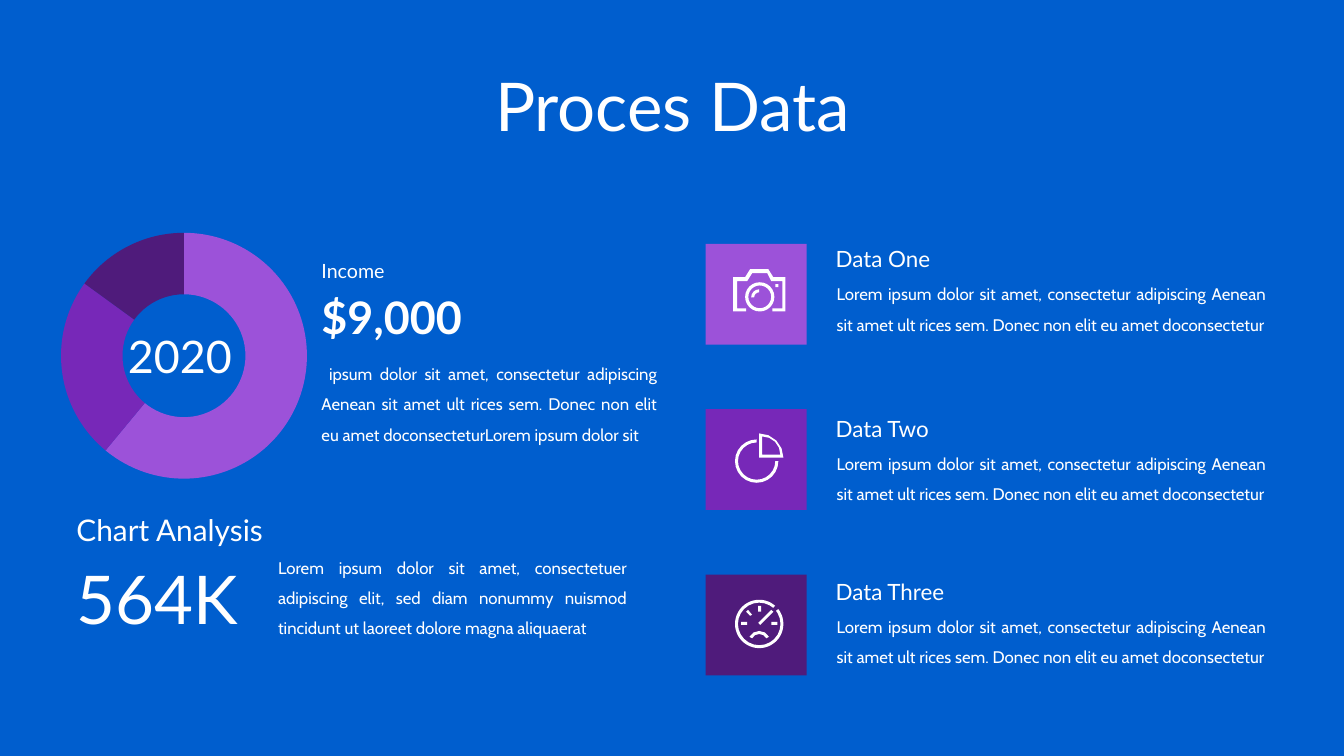
"""Build the Proces Data slide: a doughnut, key figures and three icon tiles."""
from math import cos, radians, sin

from pptx import Presentation
from pptx.chart.data import CategoryChartData
from pptx.dml.color import RGBColor
from pptx.enum.chart import XL_CHART_TYPE
from pptx.enum.shapes import MSO_SHAPE
from pptx.enum.text import MSO_ANCHOR, MSO_AUTO_SIZE, PP_ALIGN
from pptx.oxml import parse_xml
from pptx.oxml.ns import nsdecls, qn
from pptx.util import Inches, Pt

COLORS = {"ground": "005ECE", "white": "FFFFFF", "text": "262626",
          "light": "9C52D9", "middle": "7728B8", "dark": "4F1B7B"}
SHADES = ("light", "middle", "dark")
HEAD_FONT, BODY_FONT = "Lato", "Cabin"
WIDTH, HEIGHT = 13.33, 7.5

TITLE = "Proces Data"
SHARES = {"1": 61, "2": 24, "3": 15}
LOREM = ("Lorem ipsum dolor sit amet, consectetur adipiscing Aenean sit amet "
         "ult rices sem. Donec non elit eu amet doconsectetur")

LEFT, INCOME, TILES, DETAILS = 0.66, 3.09, 7, 8.19
TILE_TOP, TILE_PITCH, TILE = 2.42, 1.64, 1

LABELS = [
    ("Income", (INCOME, 2.52, 0.93, 0.34), 14, False),
    ("$9,000", (INCOME, 2.83, 1.78, 0.64), 32, True),
    ("2020", (1.17, 3.21, 1.31, 0.64), 32, False),
    ("Chart Analysis", (LEFT, 5.03, 2.44, 0.46), 21.33, False),
    ("564K", (LEFT, 5.48, 1.93, 0.91), 48, False),
]
PARAGRAPHS = [
    (" ipsum dolor sit amet, consectetur adipiscing Aenean sit amet ult rices "
     "sem. Donec non elit eu amet doconsecteturLorem ipsum dolor sit",
     (INCOME, 3.46, 3.53, 0.98)),
    ("Lorem ipsum dolor sit amet, consectetuer adipiscing elit, sed diam nonummy "
     "nuismod tincidunt ut laoreet dolore magna aliquaerat",
     (2.66, 5.38, 3.66, 0.98)),
]
ITEMS = [("Data One", 2.38, 2.67, 1.28), ("Data Two", 4.07, 4.35, 1.28),
         ("Data Three", 5.69, 5.97, 1.46)]


def arc(x, y, radius, start, end):
    """Return points along an arc, with angles running clockwise from the right."""
    steps = 4
    angles = [radians(start + (end - start) * i / steps) for i in range(steps + 1)]
    return [(x + radius * cos(a), y + radius * sin(a)) for a in angles]


def band(x, y, outer, inner, start, end):
    """Return the outline of a short curved band."""
    return arc(x, y, outer, start, end) + arc(x, y, inner, end, start)


def wedge(x, y, radius):
    """Return the outline of an upper right quarter disc."""
    return [(x, y)] + arc(x, y, radius, -90, 0)


CAMERA_BODY = [
    (0.79, 0.67), (0.66, 0.67), (0.66, 0.64), (0.76, 0.64), (0.76, 0.37),
    (0.65, 0.37), (0.61, 0.29), (0.46, 0.29), (0.41, 0.37), (0.31, 0.37),
    (0.31, 0.64), (0.4, 0.64), (0.4, 0.67), (0.27, 0.67), (0.27, 0.33),
    (0.39, 0.33), (0.44, 0.25), (0.62, 0.25), (0.67, 0.33), (0.79, 0.33)]
GAUGE_TICK = [(0.44, 0.41), (0.4, 0.37), (0.42, 0.35), (0.46, 0.4)]
GAUGE_NEEDLE = [(0.54, 0.5), (0.52, 0.48), (0.65, 0.35), (0.67, 0.37)]

ICONS = [
    {"outlines": [[CAMERA_BODY], [band(0.53, 0.53, 0.08, 0.05, 180, 270)]],
     "presets": [(MSO_SHAPE.DONUT, (0.39, 0.38, 0.29, 0.29), (0.11,)),
                 (MSO_SHAPE.RECTANGLE, (0.69, 0.4, 0.03, 0.03), ())]},
    {"outlines": [[wedge(0.53, 0.48, 0.24), wedge(0.56, 0.45, 0.18)]],
     "presets": [(MSO_SHAPE.BLOCK_ARC, (0.29, 0.3, 0.43, 0.43), (0, 270 * 0.6, 0.07))]},
    {"outlines": [[GAUGE_TICK], [GAUGE_NEEDLE],
                  [band(0.53, 0.67, 0.11, 0.08, 208, 332)]],
     "presets": [(MSO_SHAPE.RECTANGLE, (0.52, 0.31, 0.03, 0.06), ()),
                 (MSO_SHAPE.RECTANGLE, (0.65, 0.47, 0.06, 0.03), ()),
                 (MSO_SHAPE.RECTANGLE, (0.35, 0.47, 0.06, 0.03), ()),
                 (MSO_SHAPE.BLOCK_ARC, (0.29, 0.25, 0.48, 0.48),
                  (322 * 0.6, 311 * 0.6, 0.06))]},
]


def paint(shape, color):
    shape.shadow.inherit = False
    shape.fill.solid()
    shape.fill.fore_color.rgb = RGBColor.from_string(COLORS[color])
    shape.line.fill.background()


def add_preset(shapes, kind, place, color, adjustments=()):
    shape = shapes.add_shape(kind, *map(Inches, place))
    for i, value in enumerate(adjustments):
        shape.adjustments[i] = value
    paint(shape, color)


def add_outline(shapes, contours, left, top, color):
    points = [[(Inches(left + x), Inches(top + y)) for x, y in contour]
              for contour in contours]
    builder = shapes.build_freeform(*points[0][0])
    builder.add_line_segments(points[0][1:])
    for contour in points[1:]:
        builder.move_to(*contour[0])
        builder.add_line_segments(contour[1:])
    paint(builder.convert_to_shape(), color)


def add_icon(page, icon, left, top):
    shapes = page.shapes.add_group_shape().shapes
    for contours in icon["outlines"]:
        add_outline(shapes, contours, left, top, "white")
    for kind, (x, y, width, height), adjustments in icon["presets"]:
        add_preset(shapes, kind, (left + x, top + y, width, height), "white", adjustments)


def style_text(frame, text, size, font, bold=False):
    frame.text = text
    para = frame.paragraphs[0]
    span = para.runs[0].font
    span.size, span.name, span.bold = Pt(size), font, bold
    span.color.rgb = RGBColor.from_string(COLORS["white"])
    return para


def add_text(page, text, place, size, font, bold=False, wrap=False):
    frame = page.shapes.add_textbox(*map(Inches, place)).text_frame
    frame.word_wrap = wrap
    frame.auto_size = MSO_AUTO_SIZE.SHAPE_TO_FIT_TEXT
    return style_text(frame, text, size, font, bold)


def add_body(page, text, place):
    para = add_text(page, text, place, 12, BODY_FONT, wrap=True)
    para.alignment = PP_ALIGN.JUSTIFY
    para.line_spacing = 1.5


def place_title(page):
    title = page.shapes.title
    title.left, title.top, title.width, title.height = map(Inches, (0.92, 0.09, 11.5, 2))
    frame = title.text_frame
    frame.vertical_anchor = MSO_ANCHOR.MIDDLE
    frame.auto_size = MSO_AUTO_SIZE.NONE
    para = style_text(frame, TITLE, 48, HEAD_FONT)
    para.alignment = PP_ALIGN.CENTER
    para.line_spacing = 0.9
    page.shapes._spTree.append(title._element)


def add_doughnut(page):
    data = CategoryChartData()
    data.categories = list(SHARES)
    data.add_series("Series 1", list(SHARES.values()))
    place = map(Inches, (0.22, 2.17, 3.21, 2.72))
    chart = page.shapes.add_chart(XL_CHART_TYPE.DOUGHNUT, *place, data).chart
    chart.has_legend = chart.has_title = False
    chart.font.size, chart.font.name = Pt(10), BODY_FONT
    chart.font.color.rgb = RGBColor.from_string(COLORS["text"])
    plot = chart.plots[0]
    plot.vary_by_categories = True
    plot._element.find(qn("c:holeSize")).set("val", "70")
    for i, shade in enumerate(SHADES):
        look = plot.series[0].points[i].format
        look.fill.solid()
        look.fill.fore_color.rgb = RGBColor.from_string(COLORS[shade])
        look.line.fill.background()
    area = chart._chartSpace.chart.plotArea
    for layout in area.findall(qn("c:layout")):
        area.remove(layout)
    area.insert(0, parse_xml(
        f'<c:layout {nsdecls("c")}><c:manualLayout><c:layoutTarget val="inner"/>'
        '<c:xMode val="edge"/><c:yMode val="edge"/><c:x val="0.12"/><c:y val="0.05"/>'
        '<c:w val="0.76"/><c:h val="0.9"/></c:manualLayout></c:layout>'))


def main():
    deck = Presentation()
    deck.slide_width, deck.slide_height = Inches(WIDTH), Inches(HEIGHT)
    page = deck.slides.add_slide(deck.slide_layouts[5])
    add_preset(page.shapes, MSO_SHAPE.RECTANGLE, (0, 0, WIDTH, HEIGHT), "ground")
    add_doughnut(page)
    for text, place, size, bold in LABELS:
        add_text(page, text, place, size, HEAD_FONT, bold)
    for text, place in PARAGRAPHS:
        add_body(page, text, place)
    for row, (item, shade, icon) in enumerate(zip(ITEMS, SHADES, ICONS)):
        heading, heading_top, body_top, width = item
        top = TILE_TOP + row * TILE_PITCH
        add_preset(page.shapes, MSO_SHAPE.RECTANGLE, (TILES, top, TILE, TILE), shade)
        add_icon(page, icon, TILES, top)
        add_text(page, heading, (DETAILS, heading_top, width, 0.37), 16, HEAD_FONT)
        add_body(page, LOREM, (DETAILS + 0.01, body_top, 4.46, 0.67))
    place_title(page)
    deck.save("out.pptx")


if __name__ == "__main__":
    main()
